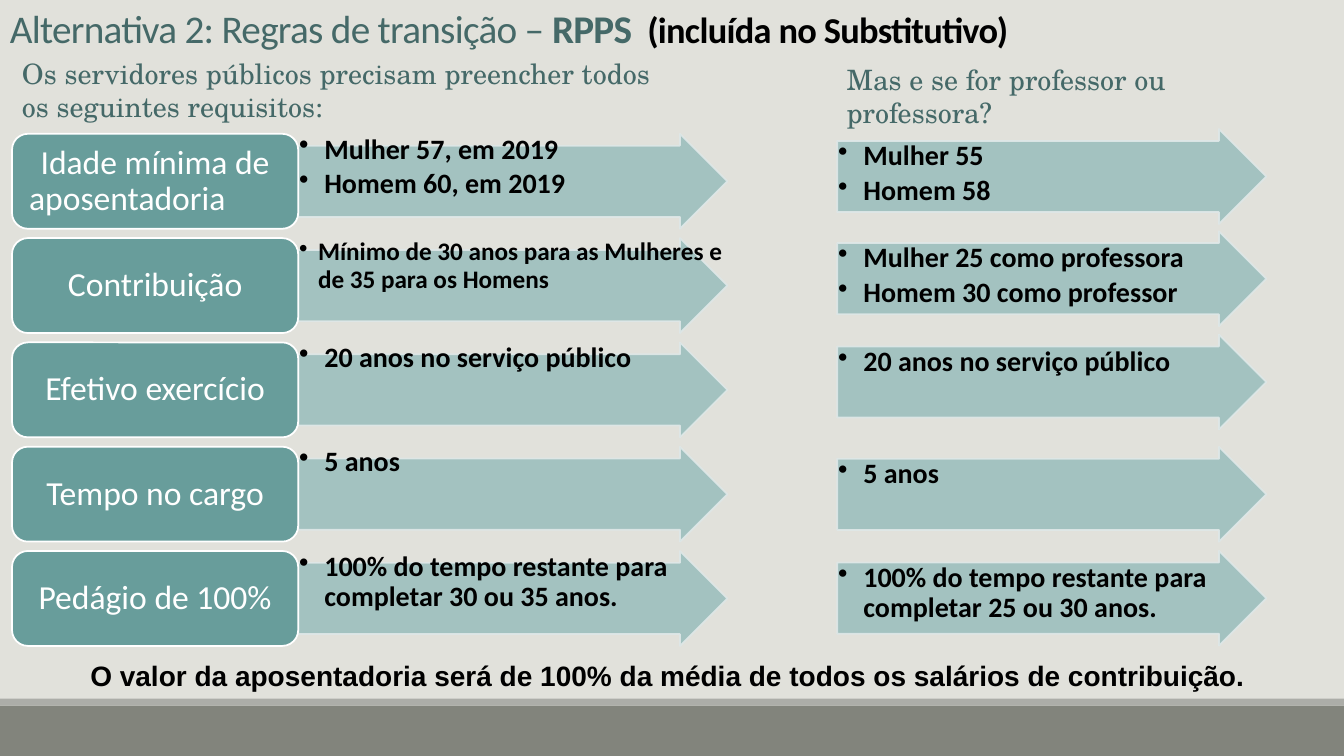
from lxml import etree
from pptx import Presentation
from pptx.dml.color import RGBColor
from pptx.enum.shapes import MSO_SHAPE
from pptx.enum.text import MSO_ANCHOR, PP_ALIGN
from pptx.oxml.ns import qn
from pptx.util import Pt

RECT = MSO_SHAPE.RECTANGLE
ROUNDED = MSO_SHAPE.ROUNDED_RECTANGLE
ARROW = MSO_SHAPE.RIGHT_ARROW
LEFT, CENTER = PP_ALIGN.LEFT, PP_ALIGN.CENTER
TOP, MIDDLE, BOTTOM = MSO_ANCHOR.TOP, MSO_ANCHOR.MIDDLE, MSO_ANCHOR.BOTTOM

BACKGROUND = RGBColor(0xE1, 0xE1, 0xDB)
FOOTER = RGBColor(0x82, 0x84, 0x7C)
FOOTER_EDGE = RGBColor(0xAC, 0xAD, 0xA8)
TEAL_DARK = RGBColor(0x45, 0x69, 0x68)
TEAL = RGBColor(0x68, 0x9D, 0x9B)
TEAL_LIGHT = RGBColor(0x9D, 0xBF, 0xBE)
TEAL_PALE = RGBColor(0xDF, 0xE8, 0xE8)
WHITE = RGBColor(0xFF, 0xFF, 0xFF)
BLACK = RGBColor(0, 0, 0)

SANS, SERIF, PLAIN = "Calibri", "TeX Gyre Schola", "Arial"

# Rows: label, left bullets, left text size, right arrow top, right bullets
ROWS = [
    ("Idade mínima de aposentadoria \t", ["Mulher 57, em 2019", "Homem 60, em 2019"], 20,
     92.2, ["Mulher 55", "Homem 58"]),
    ("Contribuição", ["Mínimo de 30 anos para as Mulheres e de 35 para os Homens"], 18,
     165.2, ["Mulher 25 como professora", "Homem 30 como professor"]),
    ("Efetivo exercício", ["20 anos no serviço público"], 20,
     239, ["20 anos no serviço público"]),
    ("Tempo no cargo", ["5 anos"], 20,
     319.2, ["5 anos"]),
    ("Pedágio de 100%", ["100% do tempo restante para completar 30 ou 35 anos."], 20,
     393.4, ["100% do tempo restante para completar 25 ou 30 anos."]),
]
ROW_TOP, ROW_PITCH, ROW_HEIGHT = 95.6, 74.5, 67.8
LABEL_LEFT, LABEL_WIDTH = 8.6, 204.4
ARROW_WIDTH = 306.6
RIGHT_LEFT, RIGHT_INSET = 598, 8.2


class SlideBuilder:
    def __init__(self, page):
        self.page = page
        page.background.fill.solid()
        page.background.fill.fore_color.rgb = BACKGROUND

    def shape(self, kind, left, top, width, height, fill, line=None):
        box = self.page.shapes.add_shape(kind, Pt(left), Pt(top), Pt(width), Pt(height))
        box.shadow.inherit = False
        box.fill.solid()
        box.fill.fore_color.rgb = fill
        if line is None:
            box.line.fill.background()
        else:
            box.line.color.rgb = line
            box.line.width = Pt(1.25)
        return box

    def arrow(self, left, top):
        box = self.shape(ARROW, left, top, ARROW_WIDTH, ROW_HEIGHT, TEAL_LIGHT, TEAL_PALE)
        box.adjustments[0] = 0.75
        box.adjustments[1] = 0.5
        for color in box._element.spPr.iter(qn("a:srgbClr")):
            etree.SubElement(color, qn("a:alpha")).set("val", "90000")

    def span(self, para, text, size, font, color, bold=False, spacing=0):
        run = para.add_run()
        run.text = text
        run.font.size = Pt(size)
        run.font.name = font
        run.font.bold = bold
        run.font.color.rgb = color
        if spacing:
            run._r.get_or_add_rPr().set("spc", str(round(spacing * 100)))

    def text(self, left, top, width, height, align=LEFT, anchor=TOP):
        box = self.page.shapes.add_textbox(Pt(left), Pt(top), Pt(width), Pt(height))
        box.text_frame.word_wrap = True
        box.text_frame.vertical_anchor = anchor
        box.text_frame.paragraphs[0].alignment = align
        return box.text_frame

    def label(self, top, text):
        box = self.shape(ROUNDED, LABEL_LEFT, top, LABEL_WIDTH, ROW_HEIGHT, TEAL, WHITE)
        frame = box.text_frame
        frame.word_wrap = True
        frame.vertical_anchor = MIDDLE
        frame.margin_left = frame.margin_right = Pt(3.9)
        para = frame.paragraphs[0]
        para.alignment = CENTER
        para.line_spacing = 0.9
        self.span(para, text, 24, SANS, WHITE)

    def bullets(self, left, top, width, height, items, size):
        frame = self.text(left, top, width, height)
        frame.margin_left = frame.margin_right = Pt(0.7)
        frame.margin_top = frame.margin_bottom = Pt(0.7)
        indent = Pt(18 if size == 20 else 13.5)
        for index, item in enumerate(items):
            para = frame.paragraphs[0] if index == 0 else frame.add_paragraph()
            props = para._p.get_or_add_pPr()
            props.set("marL", str(indent))
            props.set("indent", str(-indent))
            etree.SubElement(props, qn("a:buChar")).set("char", "•")
            para.line_spacing = 0.9
            para.space_after = Pt(size * 0.15)
            self.span(para, item, size, SANS, BLACK, bold=True)


def main():
    deck = Presentation()
    deck.slide_width, deck.slide_height = Pt(960), Pt(540)
    slide = SlideBuilder(deck.slides.add_slide(deck.slide_layouts[6]))

    # Footer band
    slide.shape(RECT, 0, 504, 960, 36, FOOTER)
    slide.shape(RECT, 0, 499, 960, 5, FOOTER_EDGE)

    # Title
    title = slide.text(0, 0, 818.6, 40.3, anchor=BOTTOM).paragraphs[0]
    title.line_spacing = 0.85
    slide.span(title, "Alternativa 2: Regras de transição – ", 28, SANS, TEAL_DARK, spacing=-0.5)
    slide.span(title, "RPPS", 28, SANS, TEAL_DARK, bold=True, spacing=-0.5)
    slide.span(title, " ", 26, SANS, TEAL_DARK, bold=True, spacing=5)
    slide.span(title, "(incluída no Substitutivo)", 26, SANS, BLACK, bold=True, spacing=-0.5)

    # Requirements on the left, teachers on the right
    for index, (label, left_items, size, right_top, right_items) in enumerate(ROWS):
        top = ROW_TOP + index * ROW_PITCH
        arrow_left = LABEL_LEFT + LABEL_WIDTH
        slide.arrow(arrow_left, top)
        slide.bullets(arrow_left, top, ARROW_WIDTH, ROW_HEIGHT, left_items, size)
        slide.label(top, label)
        slide.arrow(RIGHT_LEFT, right_top)
        slide.bullets(RIGHT_LEFT, right_top + RIGHT_INSET, 281, 51, right_items, 20)

    # Column headings
    heading = slide.text(8.6, 36.7, 480, 55.4).paragraphs[0]
    slide.span(heading, "Os servidores públicos precisam preencher todos os seguintes requisitos:",
               20, SERIF, TEAL_DARK)
    heading = slide.text(597.6, 41, 347, 32).paragraphs[0]
    slide.span(heading, "Mas e se for professor ou professora?", 20, SERIF, TEAL_DARK)

    # Closing statement
    closing = slide.text(34.6, 466.6, 885, 32, CENTER).paragraphs[0]
    slide.span(closing, "O valor da aposentadoria será de 100% da média de todos os salários "
               "de contribuição.", 20, PLAIN, BLACK, bold=True)

    deck.save("out.pptx")


if __name__ == "__main__":
    main()
